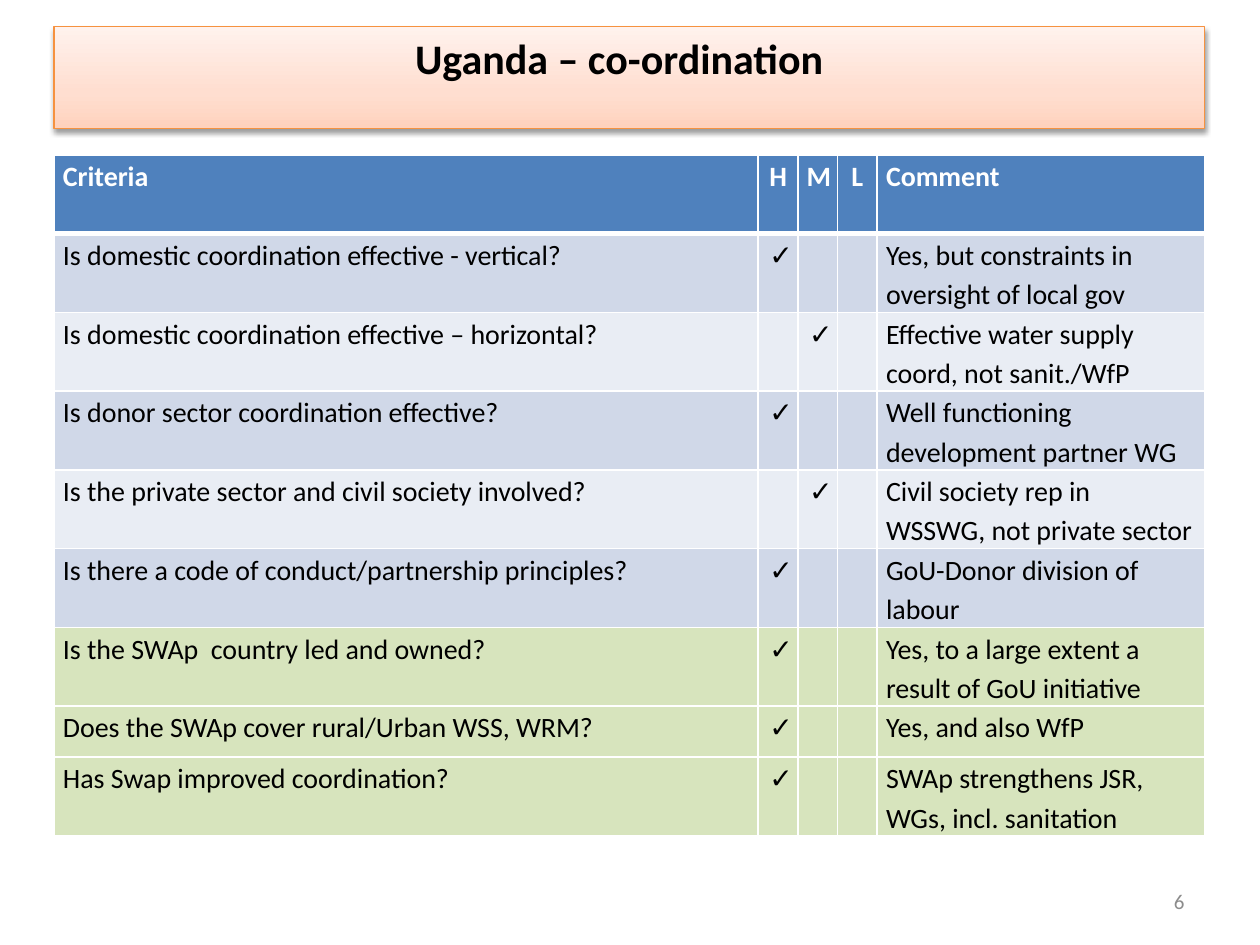
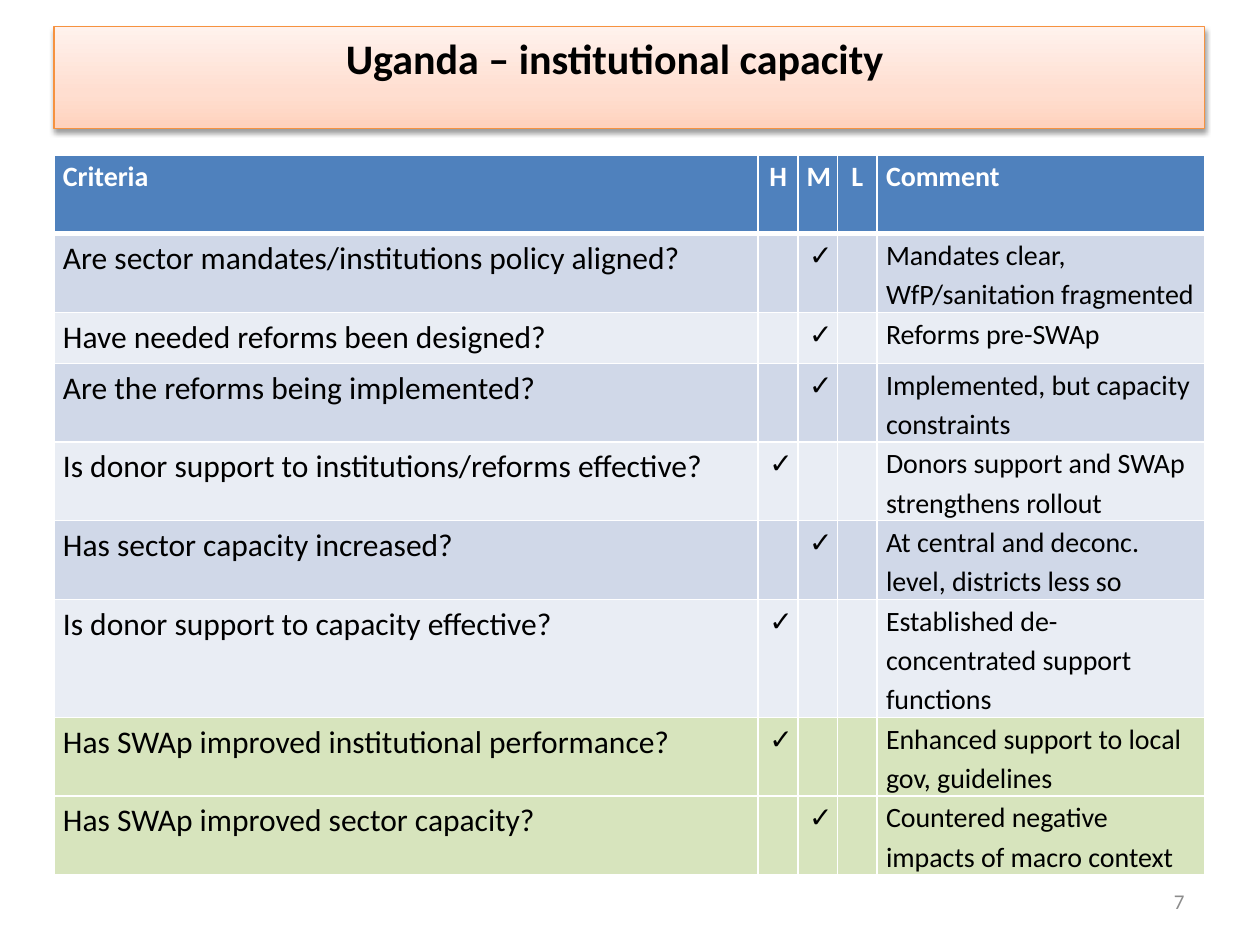
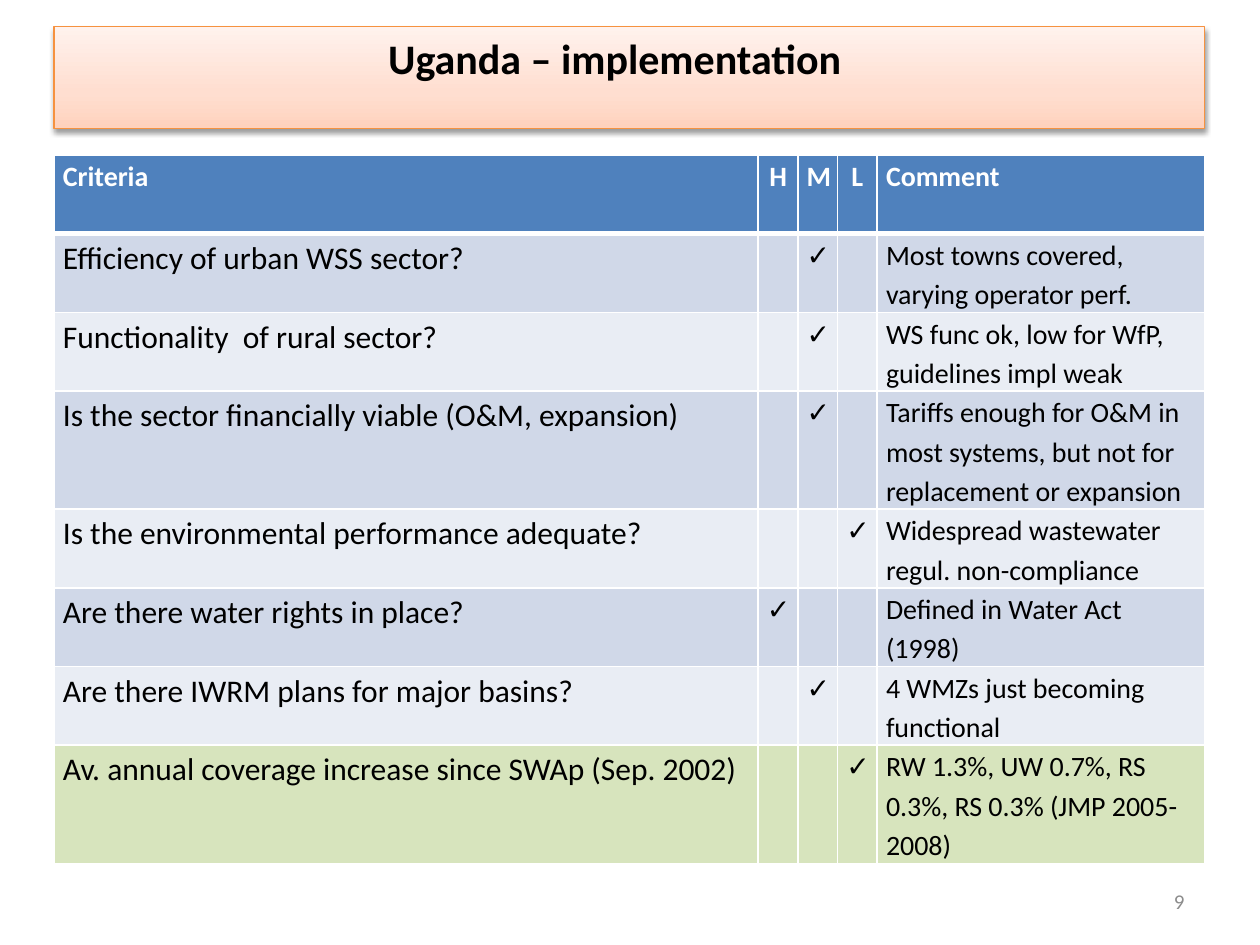
from collections import namedtuple

from lxml.etree import SubElement
from pptx import Presentation
from pptx.dml.color import RGBColor
from pptx.enum.shapes import MSO_SHAPE as Shape
from pptx.enum.text import MSO_ANCHOR as Anchor, PP_ALIGN as Align
from pptx.oxml.ns import qn
from pptx.util import Inches, Pt

Box = namedtuple("Box", "left top width height")
Row = namedtuple("Row", "criterion level lines comment")
Sheet = namedtuple("Sheet", "title title_shift number size tick_indent swap_rows rows")

SLIDE_WIDTH, SLIDE_HEIGHT = Inches(10), Inches(7.5)
FONT = "Calibri"
BLACK, WHITE, GREY = "000000", "FFFFFF", "8C8C8C"
HEADER_BLUE, SWAP_GREEN, BAND_EDGE = "4F81BD", "D7E4BD", "F69240"
ROW_BANDS = ("D0D8E8", "E9EDF4")
TITLE_STOPS = ((0, "FFD2BD"), (35, "FFDED0"), (100, "FFF2ED"))
LEVELS = "HML"
TICK = "✓"
COLUMN_SHARES = (61.2, 3.45, 3.45, 3.45, 28.45)
LINE_HEIGHTS = {1: 5.4, 2: 8.33, 3: 12.5}
CRITERION_INDENT = (0.38, -0.38)
NO_INDENT = (0, 0)

SHEETS = (
    Sheet("Uganda – co-ordination", 0.16, 6, 16, 0.02, 3, (
        Row("Is domestic coordination effective - vertical?", "H", 2,
            "Yes, but constraints in oversight of local gov"),
        Row("Is domestic coordination effective – horizontal?", "M", 2,
            "Effective water supply coord, not sanit./WfP"),
        Row("Is donor sector coordination effective?", "H", 2,
            "Well functioning development partner WG"),
        Row("Is the private sector and civil society involved?", "M", 2,
            "Civil society rep in WSSWG, not private sector"),
        Row("Is there a code of conduct/partnership principles?", "H", 2,
            "GoU-Donor division of labour"),
        Row("Is the SWAp  country led and owned?", "H", 2,
            "Yes, to a large extent a result of GoU initiative"),
        Row("Does the SWAp cover rural/Urban WSS, WRM?", "H", 1, "Yes, and also WfP"),
        Row("Has Swap improved coordination?", "H", 2,
            "SWAp strengthens JSR, WGs, incl. sanitation"),
    )),
    Sheet("Uganda – institutional capacity", 0.23, 7, 18, 0.02, 2, (
        Row("Are sector mandates/institutions policy aligned?", "M", 2,
            "Mandates clear, WfP/sanitation fragmented"),
        Row("Have needed reforms been designed?", "M", 1, "Reforms pre-SWAp"),
        Row("Are the reforms being implemented?", "M", 2,
            "Implemented, but capacity constraints"),
        Row("Is donor support to institutions/reforms effective?", "H", 2,
            "Donors support and SWAp strengthens rollout"),
        Row("Has sector capacity increased?", "M", 2,
            "At central and deconc. level, districts less so"),
        Row("Is donor support to capacity effective?", "H", 3,
            "Established de-concentrated support functions"),
        Row("Has SWAp improved institutional performance?", "H", 2,
            "Enhanced support to local gov, guidelines"),
        Row("Has SWAp improved sector capacity?", "M", 2,
            "Countered negative impacts of macro context"),
    )),
    Sheet("Uganda – implementation", 0.23, 9, 18, 0, 1, (
        Row("Efficiency of urban WSS sector?", "M", 2,
            "Most towns covered, varying operator perf."),
        Row("Functionality  of rural sector?", "M", 2,
            "WS func ok, low for WfP, guidelines impl weak"),
        Row("Is the sector financially viable (O&M, expansion)", "M", 3,
            "Tariffs enough for O&M in most systems, but not for replacement or expansion"),
        Row("Is the environmental performance adequate?", "L", 2,
            "Widespread wastewater regul. non-compliance"),
        Row("Are there water rights in place?", "H", 2, "Defined in Water Act (1998)"),
        Row("Are there IWRM plans for major basins?", "M", 2,
            "4 WMZs just becoming functional"),
        Row("Av. annual coverage increase since SWAp (Sep. 2002)", "L", 3,
            "RW 1.3%, UW 0.7%, RS 0.3%, RS 0.3% (JMP 2005-2008)"),
    )),
)


def color(hex_text):
    """Turn a hex string into a colour."""
    return RGBColor.from_string(hex_text)


def place(left, top, width, height):
    """Make a box from percentages of the slide's size."""
    return Box(int(SLIDE_WIDTH * left / 100), int(SLIDE_HEIGHT * top / 100),
               int(SLIDE_WIDTH * width / 100), int(SLIDE_HEIGHT * height / 100))


TITLE_BOX = place(4.3, 2.8, 91.3, 10.8)
TABLE_BOX = place(4.3, 16.4, 91.3, 73.6)
NUMBER_BOX = place(71.7, 92.67, 23.3, 5.33)


def apply(target, values):
    """Set each attribute of the target from a dict."""
    for name, value in values.items():
        setattr(target, name, value)


def add_node(parent, tag, **values):
    """Append a drawing element with the given attributes."""
    return SubElement(parent, qn(tag), {name: str(value) for name, value in values.items()})


def write(frame, text, size, tone, bold=False, align=Align.LEFT, indent=None, spacing=None):
    """Write one formatted paragraph in a text frame."""
    para = frame.paragraphs[0]
    apply(para, {"alignment": align, "line_spacing": spacing})
    if indent:
        margin, first = indent
        layout = para._p.get_or_add_pPr()
        layout.set("marL", str(Inches(margin)))
        layout.set("indent", str(Inches(first)))
    span = para.add_run()
    span.text = text
    apply(span.font, {"name": FONT, "size": Pt(size), "bold": bold})
    span.font.color.rgb = color(tone)


def add_title(page, box, text, shift):
    """Draw the title band, with its text moved left by a wider right inset."""
    band = page.shapes.add_shape(Shape.RECTANGLE, *box)
    band.fill.gradient()
    band.fill.gradient_angle = 90
    stops = band._element.spPr.find(".//" + qn("a:gsLst"))
    stops.clear()
    for position, tone in TITLE_STOPS:
        add_node(add_node(stops, "a:gs", pos=position * 1000), "a:srgbClr", val=tone)
    band.line.color.rgb = color(BAND_EDGE)
    band.line.width = Pt(0.75)
    band.shadow.inherit = False
    effects = band._element.spPr.find(qn("a:effectLst"))
    shadow = add_node(effects, "a:outerShdw", blurRad=Pt(3.1), dist=Pt(1.6),
                      dir=5400000, rotWithShape=0)
    add_node(add_node(shadow, "a:srgbClr", val=BLACK), "a:alpha", val=38000)
    frame = band.text_frame
    apply(frame, {"word_wrap": True, "vertical_anchor": Anchor.TOP,
                  "margin_right": Inches(0.1 + shift)})
    write(frame, text, 24, BLACK, True, Align.CENTER)


def style_cell(cell, tone, top=1, bottom=1):
    """Give a cell its white borders, insets and fill."""
    properties = cell._tc.get_or_add_tcPr()
    for side, width in zip("LRTB", (1, 1, top, bottom)):
        edge = add_node(properties, f"a:ln{side}", w=Pt(width))
        add_node(add_node(edge, "a:solidFill"), "a:srgbClr", val=WHITE)
    side_inset = Inches(0.07)
    apply(cell, {"margin_left": side_inset, "margin_right": side_inset,
                 "margin_top": 0, "margin_bottom": 0})
    cell.fill.solid()
    cell.fill.fore_color.rgb = color(tone)


def fill_header(cells):
    """Write the header row."""
    labels = ("Criteria", *LEVELS, "Comment")
    indents = (CRITERION_INDENT, (0.02, 0), (0.01, -0.01), NO_INDENT, NO_INDENT)
    for cell, label, indent in zip(cells, labels, indents):
        style_cell(cell, HEADER_BLUE, bottom=3)
        align = Align.CENTER if label in ("M", "L") else Align.LEFT
        write(cell.text_frame, label, 16, WHITE, True, align, indent, 1.15)


def fill_row(cells, row, sheet, tone, top):
    """Write one criterion with its tick and comment."""
    ticks = [TICK if level == row.level else "" for level in LEVELS]
    tick_indent = (sheet.tick_indent, 0)
    indents = (CRITERION_INDENT, *[tick_indent] * len(LEVELS), NO_INDENT)
    sizes = (sheet.size, 16, 16, 16, 16)
    texts = (row.criterion, *ticks, row.comment)
    for cell, text, size, indent in zip(cells, texts, sizes, indents):
        style_cell(cell, tone, top=top)
        if text:
            write(cell.text_frame, text, size, BLACK, indent=indent, spacing=1.15)


def add_criteria_table(page, box, sheet):
    """Draw the table of criteria, ratings and comments."""
    count = len(sheet.rows)
    table = page.shapes.add_table(count + 1, len(COLUMN_SHARES), *box).table
    apply(table, {"first_row": True, "horz_banding": False})
    for column, share in zip(table.columns, COLUMN_SHARES):
        column.width = int(box.width * share / 100)
    for line, lines in zip(table.rows, (2, *[row.lines for row in sheet.rows])):
        line.height = int(SLIDE_HEIGHT * LINE_HEIGHTS[lines] / 100)
    fill_header(table.rows[0].cells)
    for index, row in enumerate(sheet.rows):
        is_swap = index >= count - sheet.swap_rows
        tone = SWAP_GREEN if is_swap else ROW_BANDS[index % 2]
        fill_row(table.rows[index + 1].cells, row, sheet, tone, 1 if index else 3)


def add_number(page, box, number):
    """Write the slide number at the bottom right."""
    frame = page.shapes.add_textbox(*box).text_frame
    apply(frame, {"word_wrap": True, "vertical_anchor": Anchor.MIDDLE})
    write(frame, str(number), 12, GREY, align=Align.RIGHT)


def add_sheet(deck, sheet):
    """Add one assessment slide."""
    page = deck.slides.add_slide(deck.slide_layouts[6])
    add_criteria_table(page, TABLE_BOX, sheet)
    add_title(page, TITLE_BOX, sheet.title, sheet.title_shift)
    add_number(page, NUMBER_BOX, sheet.number)


def main():
    """Build and save the deck."""
    deck = Presentation()
    apply(deck, {"slide_width": SLIDE_WIDTH, "slide_height": SLIDE_HEIGHT})
    for sheet in SHEETS:
        add_sheet(deck, sheet)
    deck.save("out.pptx")


if __name__ == "__main__":
    main()
